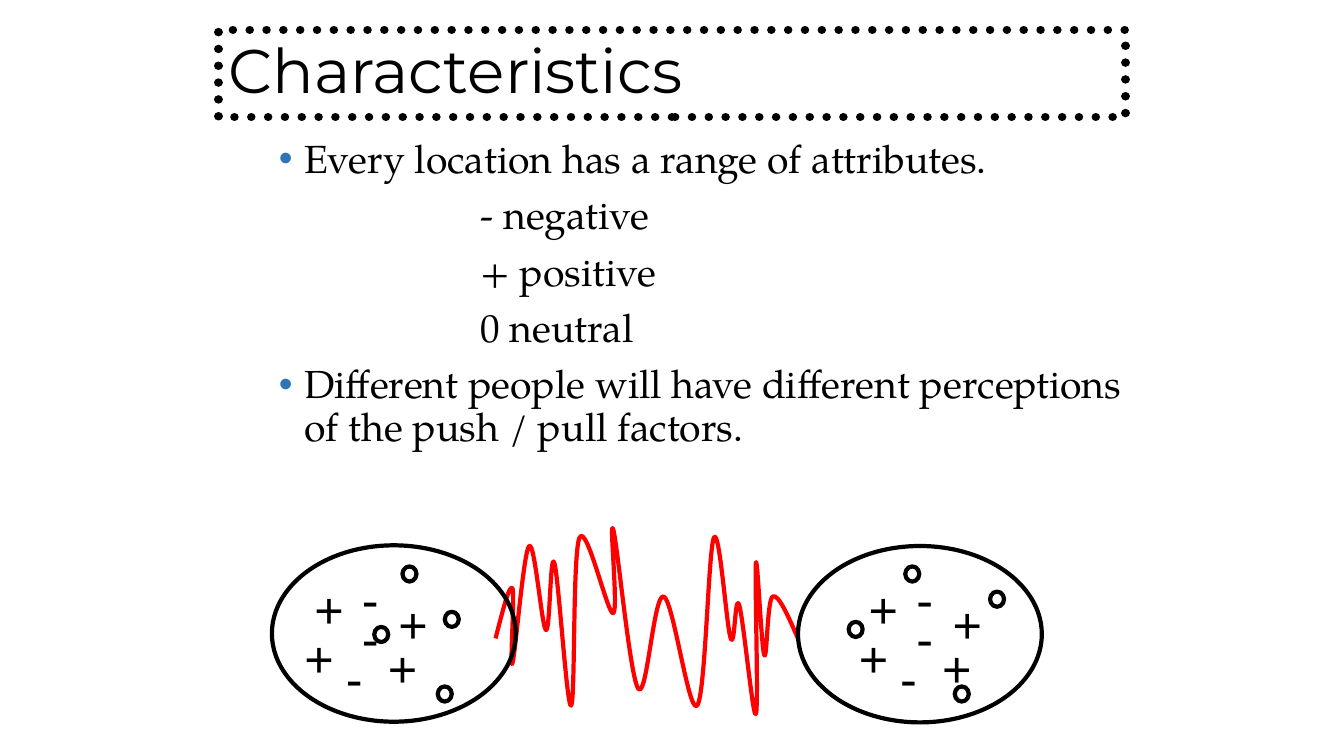
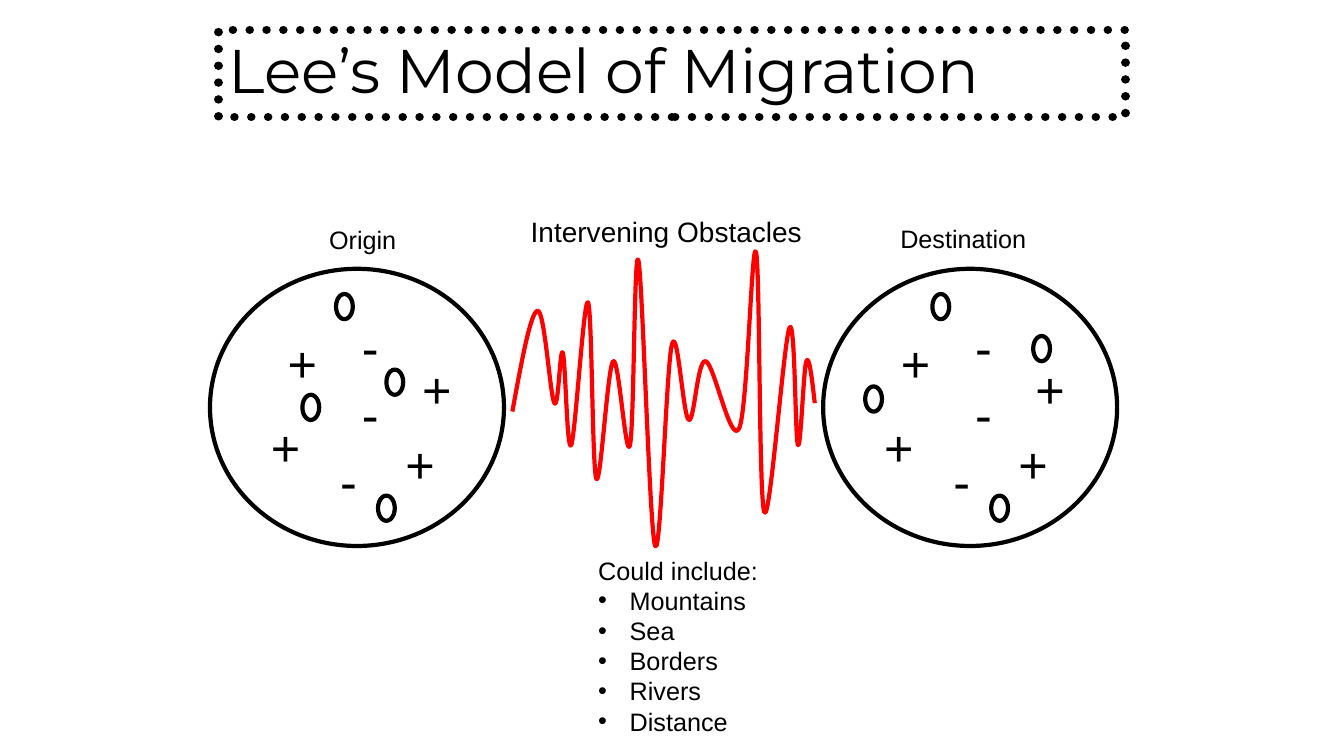
from lxml import etree
from pptx import Presentation
from pptx import util as u
from pptx.dml import color
from pptx.enum import dml, shapes, text
from pptx.oxml import ns

BLACK, RED, BLUE = "000000", "FF0000", "2E75B6"
HEADING, SERIF, SANS = "Montserrat", "TeX Gyre Pagella", "Arial"
TITLE_ONLY, TITLE_AND_BODY = 5, 1

SMALL_WAVE = [(354, 456), (366, 420), (366, 474), (378, 390), (390, 450), (396, 402), (408, 504),
              (414, 384), (438, 438), (438, 378), (456, 492), (474, 426), (498, 504), (510, 384),
              (522, 456), (528, 432), (540, 510), (540, 402), (546, 468), (552, 426), (570, 456)]
LARGE_WAVE = [(366, 294), (384, 222), (396, 288), (402, 252), (408, 318), (420, 216), (426, 342),
              (438, 258), (450, 318), (456, 186), (468, 390), (480, 246), (492, 300), (504, 258),
              (528, 306), (540, 180), (546, 366), (564, 234), (570, 318), (576, 258), (582, 288)]
SMALL_SIGNS = [("-", 264.5, 430.3), ("-", 264.5, 402), ("+", 235, 409.3), ("-", 253, 458.6),
               ("+", 228, 444.2), ("+", 295, 419.8), ("+", 287.5, 451.4)]
LARGE_SIGNS = [("-", 264.5, 270), ("-", 264.5, 222), ("+", 216, 234), ("-", 249, 318),
               ("+", 204, 294), ("+", 312, 252), ("+", 300, 306)]
SMALL_RINGS = [(287.5, 404.6), (317.7, 437), (267.3, 447.8), (312.7, 490.3),
               (646.6, 404.6), (606.2, 444.2), (682, 490.3), (707.2, 422.6)]
LARGE_RINGS = [(240, 210), (276, 264), (216, 282), (270, 354),
               (666, 210), (618, 276), (708, 354), (738, 240)]


def rgb(code):
    """Turn a hex string into a colour."""
    return color.RGBColor.from_string(code)


def place(shape, left, top, width, height):
    """Move and size a shape, in points."""
    shape.left, shape.top = u.Pt(left), u.Pt(top)
    shape.width, shape.height = u.Pt(width), u.Pt(height)


def outline(shape, code, width):
    """Give a shape a plain line without fill or shadow."""
    shape.shadow.inherit = False
    shape.fill.background()
    shape.line.color.rgb = rgb(code)
    shape.line.width = u.Pt(width)


def set_bullet(para, margin, hang, code):
    """Set the left margin and, when a colour is given, a hanging bullet."""
    props = para._p.get_or_add_pPr()
    props.set("marL", str(u.Pt(margin)))
    props.set("indent", str(-u.Pt(hang)))
    if code is None:
        etree.SubElement(props, ns.qn("a:buNone"))
        return
    fill = etree.SubElement(props, ns.qn("a:buClr"))
    etree.SubElement(fill, ns.qn("a:srgbClr"), val=code)
    etree.SubElement(props, ns.qn("a:buFont"), typeface=SANS)
    etree.SubElement(props, ns.qn("a:buChar"), char="•")


def write(frame, items, font, size, spacing=1.0, before=0, align=text.PP_ALIGN.LEFT):
    """Fill a frame with (text, margin, hang, bullet colour) paragraphs."""
    frame.word_wrap = True
    frame.auto_size = text.MSO_AUTO_SIZE.NONE
    for index, (words, margin, hang, code) in enumerate(items):
        para = frame.paragraphs[0] if index == 0 else frame.add_paragraph()
        para.text = words
        para.alignment = align
        para.line_spacing = spacing
        para.space_before = u.Pt(before)
        set_bullet(para, margin, hang, code)
        para.font.name = font
        para.font.size = u.Pt(size)
        para.font.color.rgb = rgb(BLACK)


def add_text(slide, items, left, top, width, height, size, align=text.PP_ALIGN.LEFT):
    """Add a sans-serif text box."""
    box = slide.shapes.add_textbox(u.Pt(left), u.Pt(top), u.Pt(width), u.Pt(height))
    write(box.text_frame, items, SANS, size, align=align)


def add_label(slide, words, left, top, width, height, size, align=text.PP_ALIGN.LEFT):
    """Add a single line of text."""
    add_text(slide, [(words, 0, 0, None)], left, top, width, height, size, align)


def add_titled_slide(deck, layout, words):
    """Add a slide whose title sits in a dotted frame."""
    slide = deck.slides.add_slide(deck.slide_layouts[layout])
    title = slide.shapes.title
    place(title, 156, 21.3, 648, 62.3)
    title.fill.background()
    title.line.color.rgb = rgb(BLACK)
    title.line.width = u.Pt(6)
    title.line.dash_style = dml.MSO_LINE.ROUND_DOT
    title._element.spPr.find(ns.qn("a:ln")).set("cap", "rnd")
    title.text_frame.vertical_anchor = text.MSO_ANCHOR.MIDDLE
    write(title.text_frame, [(words, 0, 0, None)], HEADING, 44, spacing=0.9)
    return slide


def add_ovals(slide, corners, width, height):
    """Add equal black ovals at the given top-left corners."""
    for left, top in corners:
        oval = slide.shapes.add_shape(shapes.MSO_SHAPE.OVAL, u.Pt(left), u.Pt(top),
                                      u.Pt(width), u.Pt(height))
        outline(oval, BLACK, 3)


def add_signs(slide, signs, shift):
    """Add plus and minus signs for the origin and, shifted, for the destination."""
    for offset in (0, shift):
        for sign, center, top in signs:
            add_label(slide, sign, center + offset - 20, top, 40, 50.4, 36, text.PP_ALIGN.CENTER)


def middle(start, end):
    """Return the point halfway between two points."""
    return tuple((a + b) / 2 for a, b in zip(start, end))


def curve_points(knots):
    """Return two control points and the end point for each curve between knots."""
    slopes = [tuple((b - a) / 6 for a, b in zip(before, after))
              for before, after in zip(knots, knots[2:])]
    leaving = [tuple(a + b for a, b in zip(knot, slope)) for knot, slope in zip(knots[1:], slopes)]
    arriving = [tuple(a - b for a, b in zip(knot, slope)) for knot, slope in zip(knots[1:], slopes)]
    leaving.insert(0, middle(knots[0], arriving[0]))
    arriving.append(middle(leaving[-1], knots[-1]))
    return [point for curve in zip(leaving, arriving, knots[1:]) for point in curve]


def add_wave(slide, knots):
    """Draw the red obstacle line as smooth curves through the knots."""
    points = [(u.Pt(left), u.Pt(top)) for left, top in [knots[0], *curve_points(knots)]]
    builder = slide.shapes.build_freeform(*points[0])
    builder.add_line_segments(points[1:], close=False)
    wave = builder.convert_to_shape()
    outline(wave, RED, 3)
    lines = list(wave._element.iter(ns.qn("a:lnTo")))
    for trio in zip(lines[::3], lines[1::3], lines[2::3]):
        curve = etree.Element(ns.qn("a:cubicBezTo"))
        trio[0].addprevious(curve)
        for line in trio:
            curve.append(line[0])
            line.getparent().remove(line)


def add_characteristics(deck):
    """Build the slide on the attributes of locations."""
    slide = add_titled_slide(deck, TITLE_AND_BODY, "Characteristics")
    add_wave(slide, SMALL_WAVE)
    body = slide.placeholders[1]
    place(body, 192, 96, 630, 420)
    kinds = [(words, 144, 0, None) for words in ("- negative", "+ positive", "0 neutral")]
    write(body.text_frame, [
        ("Every location has a range of attributes.", 18, 18, BLUE),
        *kinds,
        ("Different people will have different perceptions of the push / pull factors.", 18, 18, BLUE),
    ], SERIF, 28, spacing=0.9, before=10)
    add_ovals(slide, [(194.2, 389.5), (570, 390)], 174.2, 126)
    add_signs(slide, SMALL_SIGNS, 396)
    add_ovals(slide, SMALL_RINGS, 10, 10.8)


def add_model(deck):
    """Build the slide with the migration model."""
    slide = add_titled_slide(deck, TITLE_ONLY, "Lee’s Model of Migration")
    add_ovals(slide, [(150, 192), (588, 192)], 210, 198)
    add_signs(slide, LARGE_SIGNS, 438)
    add_wave(slide, LARGE_WAVE)
    add_label(slide, "Intervening Obstacles", 372, 150, 228, 31, 20)
    add_ovals(slide, LARGE_RINGS, 12, 18)
    add_label(slide, "Destination", 636, 156, 114, 29, 18)
    add_label(slide, "Origin", 228, 156.4, 114, 29, 18)
    obstacles = ("Mountains", "Sea", "Borders", "Rivers", "Distance")
    add_text(slide, [("Could include:", 0, 0, None),
                     *((words, 22.5, 22.5, BLACK) for words in obstacles)],
             420.2, 392.8, 207, 160, 18)


def main():
    """Build and save the deck."""
    deck = Presentation()
    deck.slide_width, deck.slide_height = u.Pt(960), u.Pt(540)
    add_characteristics(deck)
    add_model(deck)
    deck.save("out.pptx")


if __name__ == "__main__":
    main()
